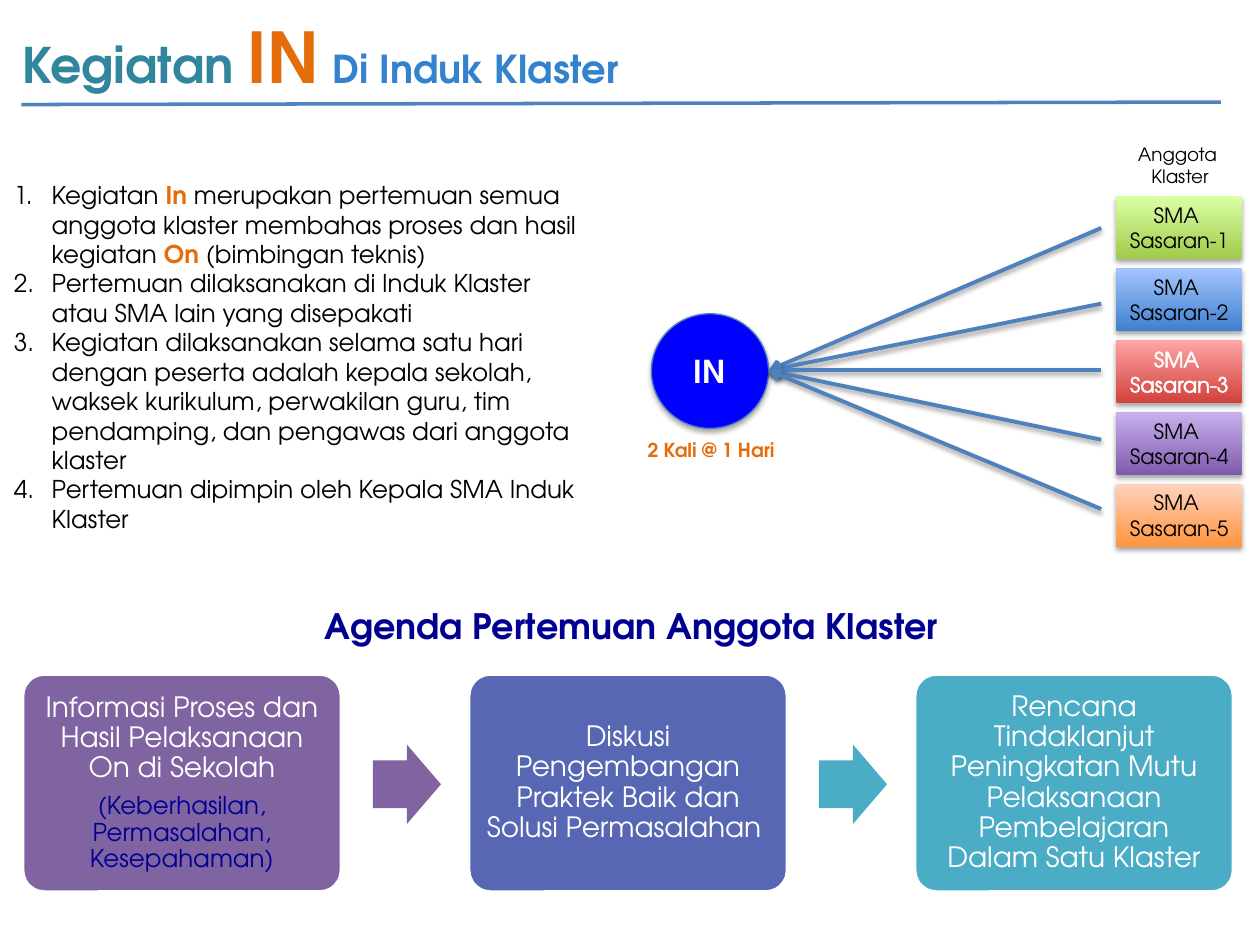
from dataclasses import dataclass

from lxml import etree
from pptx import Presentation
from pptx.dml.color import RGBColor
from pptx.enum.shapes import MSO_CONNECTOR, MSO_SHAPE
from pptx.enum.text import MSO_ANCHOR, MSO_AUTO_SIZE, PP_ALIGN
from pptx.oxml.ns import qn
from pptx.util import Inches, Pt

LEFT, CENTER = PP_ALIGN.LEFT, PP_ALIGN.CENTER
TOP, MIDDLE = MSO_ANCHOR.TOP, MSO_ANCHOR.MIDDLE
NO_AUTOFIT = MSO_AUTO_SIZE.NONE
STRAIGHT = MSO_CONNECTOR.STRAIGHT
RECTANGLE, OVAL = MSO_SHAPE.RECTANGLE, MSO_SHAPE.OVAL
CARD, ARROW = MSO_SHAPE.ROUNDED_RECTANGLE, MSO_SHAPE.RIGHT_ARROW


@dataclass(frozen=True)
class Theme:
    font: str = "TeX Gyre Adventor"
    black: str = "000000"
    white: str = "FFFFFF"
    teal: str = "31859C"
    orange: str = "E46C0A"
    sky: str = "3382CE"
    navy: str = "000090"
    line: str = "4F81BD"
    hub: str = "0000FF"
    hub_edge: str = "4B7EBC"
    title: float = 28
    title_accent: float = 40
    title_rest: float = 22
    heading: float = 20
    hub_text: float = 18
    card: float = 16
    body: float = 14
    school: float = 12
    note: float = 11
    caption: float = 10.5


class SlideBuilder:
    def __init__(self, slide, theme):
        self.slide = slide
        self.theme = theme

    def style(self, font, size=None, color=None, bold=None):
        if size:
            font.size = Pt(size)
        if color:
            font.color.rgb = RGBColor.from_string(color)
        if bold is not None:
            font.bold = bold

    def fill_text(self, frame, paragraphs, size, color, bold=False,
                  align=CENTER, anchor=TOP, wrap=True):
        """Each paragraph is a list of runs: (text, style differences)."""
        frame.auto_size = NO_AUTOFIT
        frame.word_wrap = wrap
        frame.vertical_anchor = anchor
        for index, runs in enumerate(paragraphs):
            paragraph = frame.add_paragraph() if index else frame.paragraphs[0]
            paragraph.alignment = align
            paragraph.font.name = self.theme.font
            self.style(paragraph.font, size, color, bold)
            for text, changes in runs:
                run = paragraph.add_run()
                run.text = text
                self.style(run.font, **changes)
        return frame

    def place(self, holder, box):
        holder.left, holder.top, holder.width, holder.height = map(Inches, box)

    def title(self, box, runs, **style):
        holder = self.slide.shapes.title
        self.place(holder, box)
        self.fill_text(holder.text_frame, [runs], align=LEFT, **style)

    def numbered_list(self, box, items, **style):
        holder = self.slide.placeholders[1]
        self.place(holder, box)
        frame = self.fill_text(holder.text_frame, items, align=LEFT, **style)
        for paragraph in frame.paragraphs:
            paragraph.space_before = Pt(0)
            properties = paragraph._p.get_or_add_pPr()
            properties.set("marL", str(Inches(0.3)))
            properties.set("indent", str(-Inches(0.3)))
            number = etree.Element(qn("a:buAutoNum"), type="arabicPeriod")
            properties.find(qn("a:defRPr")).addprevious(number)

    def text(self, box, lines, **style):
        holder = self.slide.shapes.add_textbox(*map(Inches, box))
        self.fill_text(holder.text_frame, [[(line, {})] for line in lines],
                       wrap=False, **style)

    def shape(self, kind, box, fill, edge=None, edge_width=1.0, adjust=()):
        """A fill is one colour, or a (bottom, top) pair for a gradient."""
        shape = self.slide.shapes.add_shape(kind, *map(Inches, box))
        shape.shadow.inherit = False
        for index, value in enumerate(adjust):
            shape.adjustments[index] = value
        if isinstance(fill, tuple):
            shape.fill.gradient()
            shape.fill.gradient_angle = 90
            for stop, color in zip(shape.fill.gradient_stops, fill):
                stop.color.rgb = RGBColor.from_string(color)
        else:
            shape.fill.solid()
            shape.fill.fore_color.rgb = RGBColor.from_string(fill)
        if edge:
            shape.line.color.rgb = RGBColor.from_string(edge)
            shape.line.width = Pt(edge_width)
        else:
            shape.line.fill.background()
        return shape

    def line(self, start, end, width, arrow=False):
        line = self.slide.shapes.add_connector(
            STRAIGHT, *map(Inches, (*start, *end)))
        line.line.color.rgb = RGBColor.from_string(self.theme.line)
        line.line.width = Pt(width)
        properties = line._element.spPr
        if arrow:
            etree.SubElement(properties.find(qn("a:ln")), qn("a:headEnd"),
                             type="arrow")
        etree.SubElement(properties, qn("a:effectLst"))
        return line

    def drop_shadow(self, item, distance, opacity):
        effects = item._element.spPr.find(qn("a:effectLst"))
        shadow = etree.SubElement(
            effects, qn("a:outerShdw"), blurRad=str(Pt(3.1)),
            dist=str(Pt(distance)), dir="5400000", rotWithShape="0")
        color = etree.SubElement(shadow, qn("a:srgbClr"), val=self.theme.black)
        etree.SubElement(color, qn("a:alpha"), val=str(opacity * 1000))

    def outline_text(self, frame, color, width):
        for paragraph in frame.paragraphs:
            for run in paragraph.runs:
                outline = etree.Element(qn("a:ln"), w=str(Pt(width)))
                fill = etree.SubElement(outline, qn("a:solidFill"))
                etree.SubElement(fill, qn("a:srgbClr"), val=color)
                run._r.get_or_add_rPr().insert(0, outline)


def main():
    theme = Theme()
    deck = Presentation()
    deck.slide_width, deck.slide_height = Inches(10), Inches(7.5)
    page = SlideBuilder(deck.slides.add_slide(deck.slide_layouts[1]), theme)
    accent = {"color": theme.orange, "bold": True}

    # Title and rule
    page.title((0.08, 0.06, 9.6, 0.77), [
        ("Kegiatan ", {}),
        ("IN", {"size": theme.title_accent, "color": theme.orange}),
        (" ", {}),
        ("Di Induk Klaster", {"size": theme.title_rest, "color": theme.sky}),
    ], size=theme.title, color=theme.teal, bold=True)
    page.line((0.17, 0.83), (9.69, 0.81), 2)

    # Description of the activity
    page.numbered_list((0.01, 1.38, 4.71, 2.93), [
        [("Kegiatan ", {}), ("In", accent),
         (" merupakan pertemuan semua anggota klaster membahas proses dan "
          "hasil kegiatan ", {}),
         ("On", accent), (" (bimbingan teknis)", {})],
        [("Pertemuan dilaksanakan di Induk Klaster atau SMA lain yang "
          "disepakati", {})],
        [("Kegiatan dilaksanakan selama satu hari dengan peserta adalah "
          "kepala sekolah, waksek kurikulum, perwakilan guru, tim "
          "pendamping, dan pengawas dari anggota klaster", {})],
        [("Pertemuan dipimpin oleh Kepala SMA Induk Klaster", {})],
    ], size=theme.body, color=theme.black)

    # Hub
    hub = page.shape(OVAL, (5.17, 2.49, 0.93, 0.91), theme.hub,
                     theme.hub_edge, 0.75)
    page.drop_shadow(hub, 1.8, 35)
    page.fill_text(hub.text_frame, [[("IN", {})]], theme.hub_text,
                   theme.white, bold=True, anchor=MIDDLE)
    page.text((5.01, 3.43, 1.27, 0.29), ["2 Kali @ 1 Hari"],
              size=theme.note, color=theme.orange, bold=True)

    # Member schools: gradient, text colour, height of the arrow's outer end
    page.text((8.94, 1.09, 0.85, 0.45), ["Anggota ", "Klaster"],
              size=theme.caption, color=theme.black)
    schools = [
        (("A0CA4A", "DAFFA5"), theme.black, 1.81),
        (("3F80CE", "A4C4FF"), theme.black, 2.41),
        (("D1403C", "FFA6A5"), theme.white, 2.94),
        (("7F5BAB", "C8B0ED"), theme.black, 3.49),
        (("FF953E", "FFD2BD"), theme.black, 4.04),
    ]
    for index, (gradient, color, arrow_y) in enumerate(schools):
        school = page.shape(RECTANGLE, (8.86, 1.56 + 0.57 * index, 1, 0.5),
                            gradient)
        page.drop_shadow(school, 1.8, 35)
        page.fill_text(school.text_frame,
                       [[("SMA ", {})], [(f"Sasaran-{index + 1}", {})]],
                       theme.school, color, wrap=False)
        if color == theme.white:
            page.outline_text(school.text_frame, color, 1.45)
        arrow = page.line((6.1, 2.94), (8.74, arrow_y), 2.25, arrow=True)
        page.drop_shadow(arrow, 1.6, 38)

    # Agenda
    page.text((2.48, 4.75, 5.12, 0.44), ["Agenda Pertemuan Anggota Klaster"],
              size=theme.heading, color=theme.navy, bold=True, align=LEFT)
    detail = {"size": theme.body, "color": theme.navy}
    agenda = [
        ("8064A2", [
            [("Informasi Proses dan Hasil Pelaksanaan On di Sekolah", {})],
            [("(Keberhasilan, Permasalahan, Kesepahaman)", detail)]]),
        ("5767B4", [
            [("Diskusi Pengembangan Praktek Baik dan Solusi Permasalahan ",
              {})]]),
        ("4BACC6", [
            [("Rencana Tindaklanjut Peningkatan Mutu Pelaksanaan "
              "Pembelajaran Dalam Satu Klaster", {})]]),
    ]
    arrow_colors = ["8064A2", "4BACC6"]
    for index, (fill, paragraphs) in enumerate(agenda):
        left = 0.18 + 3.54 * index
        step = page.shape(CARD, (left, 5.35, 2.53, 1.73), fill, theme.white, 2,
                          adjust=[0.1])
        frame = page.fill_text(step.text_frame, paragraphs, theme.card,
                               theme.white, anchor=MIDDLE)
        frame.margin_left = frame.margin_right = Inches(0.07)
        frame.margin_top = frame.margin_bottom = Inches(0.07)
        for paragraph in frame.paragraphs:
            paragraph.line_spacing = 0.9
            paragraph.space_after = Pt(0.35 * theme.card)
        if index < len(arrow_colors):
            page.shape(ARROW, (left + 2.78, 5.91, 0.54, 0.63),
                       arrow_colors[index], adjust=[0.6, 0.5])

    deck.save("out.pptx")


if __name__ == "__main__":
    main()
